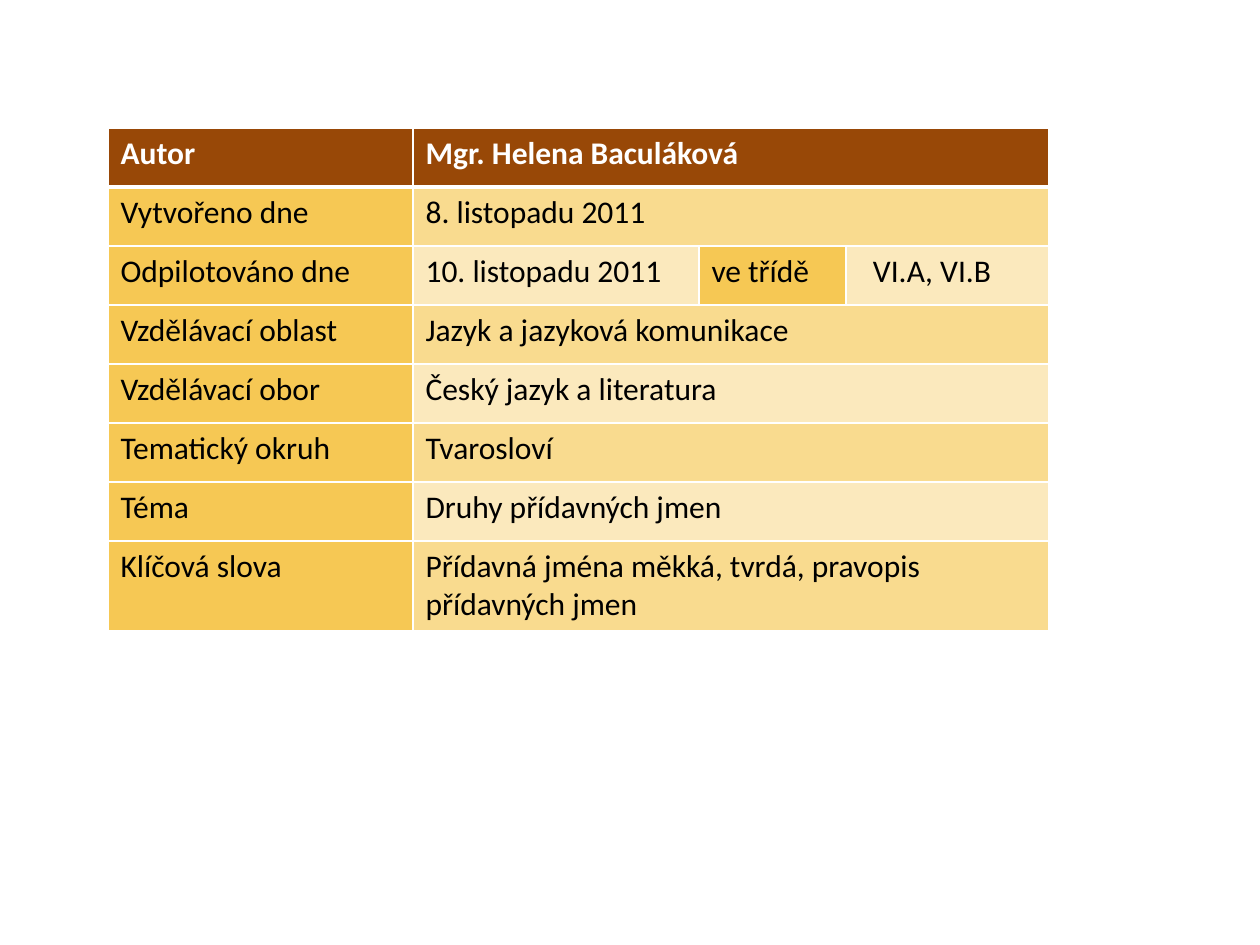
from dataclasses import dataclass

from lxml.etree import SubElement
from pptx import Presentation
from pptx.dml.color import RGBColor as Color
from pptx.oxml.ns import qn
from pptx.util import Emu, Pt

PX = 914400 // 126  # one pixel in EMU


@dataclass(frozen=True)
class Theme:
    font: str = "Calibri"
    size: int = 18
    header: str = "984807"
    label: str = "F6C854"
    dark_band: str = "F9DB8F"
    light_band: str = "FBE9BD"
    text: str = "000000"
    white: str = "FFFFFF"
    rule: int = 1
    header_rule: int = 3


THEME = Theme()
COLUMNS = [305, 286, 147, 203]
ROW_HEIGHT, LAST_ROW_HEIGHT = 59, 90
CLASS_INDENT = 27
RECORD = [
    ["Autor", "Mgr. Helena Baculáková"],
    ["Vytvořeno dne", "8. listopadu 2011"],
    ["Odpilotováno dne", "10. listopadu 2011", "ve třídě", "VI.A, VI.B"],
    ["Vzdělávací oblast", "Jazyk a jazyková komunikace"],
    ["Vzdělávací obor", "Český jazyk a literatura"],
    ["Tematický okruh", "Tvarosloví"],
    ["Téma", "Druhy přídavných jmen"],
    ["Klíčová slova", "Přídavná jména měkká, tvrdá, pravopis přídavných jmen"],
]


def px(length):
    return Emu(length * PX)


def set_borders(cell, top, bottom):
    """Draw white rules; they must precede the fill in the cell's XML."""
    properties = cell._tc.get_or_add_tcPr()
    widths = {"L": THEME.rule, "R": THEME.rule, "T": top, "B": bottom}
    for side, width in widths.items():
        line = SubElement(properties, qn(f"a:ln{side}"), w=str(Pt(width)))
        fill = SubElement(line, qn("a:solidFill"))
        SubElement(fill, qn("a:srgbClr"), val=THEME.white)


def fill_color(row, column):
    if row == 0:
        return THEME.header
    if column % 2 == 0:
        return THEME.label
    return THEME.dark_band if row % 2 else THEME.light_band


def style_cell(cell, row, column):
    set_borders(cell,
                top=THEME.header_rule if row == 1 else THEME.rule,
                bottom=THEME.header_rule if row == 0 else THEME.rule)
    cell.fill.solid()
    cell.fill.fore_color.rgb = Color.from_string(fill_color(row, column))


def write_cell(cell, text, is_header):
    cell.text_frame.text = text
    font = cell.text_frame.paragraphs[0].runs[0].font
    font.name, font.size, font.bold = THEME.font, Pt(THEME.size), is_header
    font.color.rgb = Color.from_string(THEME.white if is_header else THEME.text)


def add_record_table(page, left, top, width, height):
    frame = page.shapes.add_table(len(RECORD), len(COLUMNS),
                                  px(left), px(top), px(width), px(height))
    table = frame.table
    for column, column_width in zip(table.columns, COLUMNS):
        column.width = px(column_width)
    for row in table.rows:
        row.height = px(ROW_HEIGHT)
    table.rows[len(RECORD) - 1].height = px(LAST_ROW_HEIGHT)

    for row, texts in enumerate(RECORD):
        for column in range(len(COLUMNS)):
            style_cell(table.cell(row, column), row, min(column, len(texts) - 1))
        # Rows with a single value spread it over the remaining columns
        if len(texts) == 2:
            table.cell(row, 1).merge(table.cell(row, len(COLUMNS) - 1))
        for column, text in enumerate(texts):
            write_cell(table.cell(row, column), text, row == 0)
        # The class names stand further in than the other values
        if len(texts) == len(COLUMNS):
            table.cell(row, len(COLUMNS) - 1).margin_left = px(CLASS_INDENT)


def main():
    deck = Presentation()
    deck.slide_width, deck.slide_height = px(1260), px(945)
    page = deck.slides.add_slide(deck.slide_layouts[6])
    height = ROW_HEIGHT * (len(RECORD) - 1) + LAST_ROW_HEIGHT
    add_record_table(page, 108, 128, sum(COLUMNS), height)
    deck.save("out.pptx")


if __name__ == "__main__":
    main()
